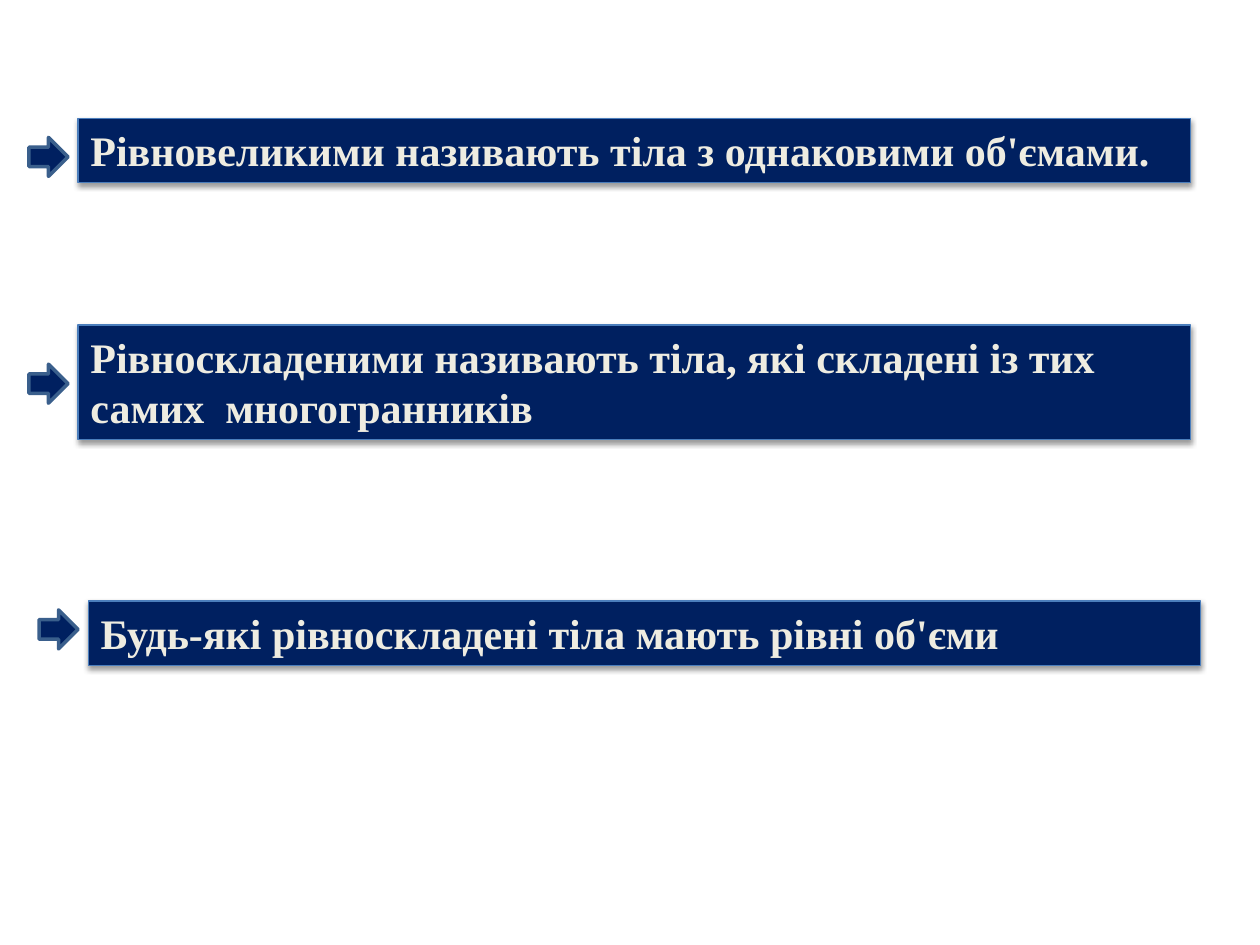
"""Build a slide with three definitions about solids, each marked by an arrow."""
from lxml.etree import SubElement
from pptx import Presentation
from pptx.dml.color import RGBColor
from pptx.enum.shapes import MSO_SHAPE as SHAPE
from pptx.enum.text import MSO_ANCHOR as ANCHOR, MSO_AUTO_SIZE as FIT, PP_ALIGN as ALIGN
from pptx.oxml.ns import qn
from pptx.util import Inches, Pt

COLORS = {
    "navy": "002060",
    "bar_line": "4B7EBC",
    "arrow_line": "3A5F8C",
    "cream": "EEECE1",
    "shadow": "000000",
}
BAR_WIDTH, ARROW_SIZE, ARROW_OFFSET = 8.83, 0.31, 0.39
DEFINITIONS = [
    ("Рівновеликими називають тіла з однаковими об'ємами.", 0.62, 0.94, 0.51, 1.09),
    ("Рівноскладеними називають тіла, які складені із тих самих  многогранників",
     0.62, 2.58, 0.91, 2.89),
    ("Будь-які рівноскладені тіла мають рівні об'єми", 0.7, 4.77, 0.51, 4.84),
]


def rgb(name):
    return RGBColor.from_string(COLORS[name])


def write(tf, text, size=24, color="cream", font="Times New Roman", bold=True, align=ALIGN.LEFT):
    p = tf.paragraphs[0]
    p.alignment = align
    r = p.add_run()
    r.text = text
    r.font.size, r.font.name, r.font.bold = Pt(size), font, bold
    r.font.color.rgb = rgb(color)


def add_shadow(sp):
    effects = sp._element.spPr.find(qn("a:effectLst"))
    shadow = SubElement(effects, qn("a:outerShdw"), blurRad=str(Pt(3.1)),
                        dist=str(Pt(1.6)), dir="5400000", rotWithShape="0")
    color = SubElement(shadow, qn("a:srgbClr"), val=COLORS["shadow"])
    SubElement(color, qn("a:alpha"), val="38000")


class SlideBuilder:
    def __init__(self, slide, fill="navy"):
        self.slide = slide
        self.fill = fill

    def shape(self, parent, kind, left, top, width, height, line, weight):
        sp = parent.shapes.add_shape(kind, Inches(left), Inches(top), Inches(width), Inches(height))
        sp.shadow.inherit = False
        sp.fill.solid()
        sp.fill.fore_color.rgb = rgb(self.fill)
        sp.line.color.rgb = rgb(line)
        sp.line.width = Pt(weight)
        return sp

    def bar(self, parent, text, left, top, height):
        sp = self.shape(parent, SHAPE.RECTANGLE, left, top, BAR_WIDTH, height, "bar_line", 0.75)
        add_shadow(sp)
        tf = sp.text_frame
        tf.word_wrap = True
        tf.auto_size = FIT.SHAPE_TO_FIT_TEXT
        tf.vertical_anchor = ANCHOR.TOP
        write(tf, text)

    def arrow(self, parent, left, top):
        self.shape(parent, SHAPE.RIGHT_ARROW, left, top, ARROW_SIZE, ARROW_SIZE, "arrow_line", 2)

    def definition(self, text, left, top, height, arrow_top):
        group = self.slide.shapes.add_group_shape()
        self.bar(group, text, left, top, height)
        self.arrow(group, left - ARROW_OFFSET, arrow_top)


def main():
    prs = Presentation()
    prs.slide_width, prs.slide_height = Inches(10), Inches(7.5)
    s = SlideBuilder(prs.slides.add_slide(prs.slide_layouts[6]))
    for definition in DEFINITIONS:
        s.definition(*definition)
    prs.save("out.pptx")


if __name__ == "__main__":
    main()
